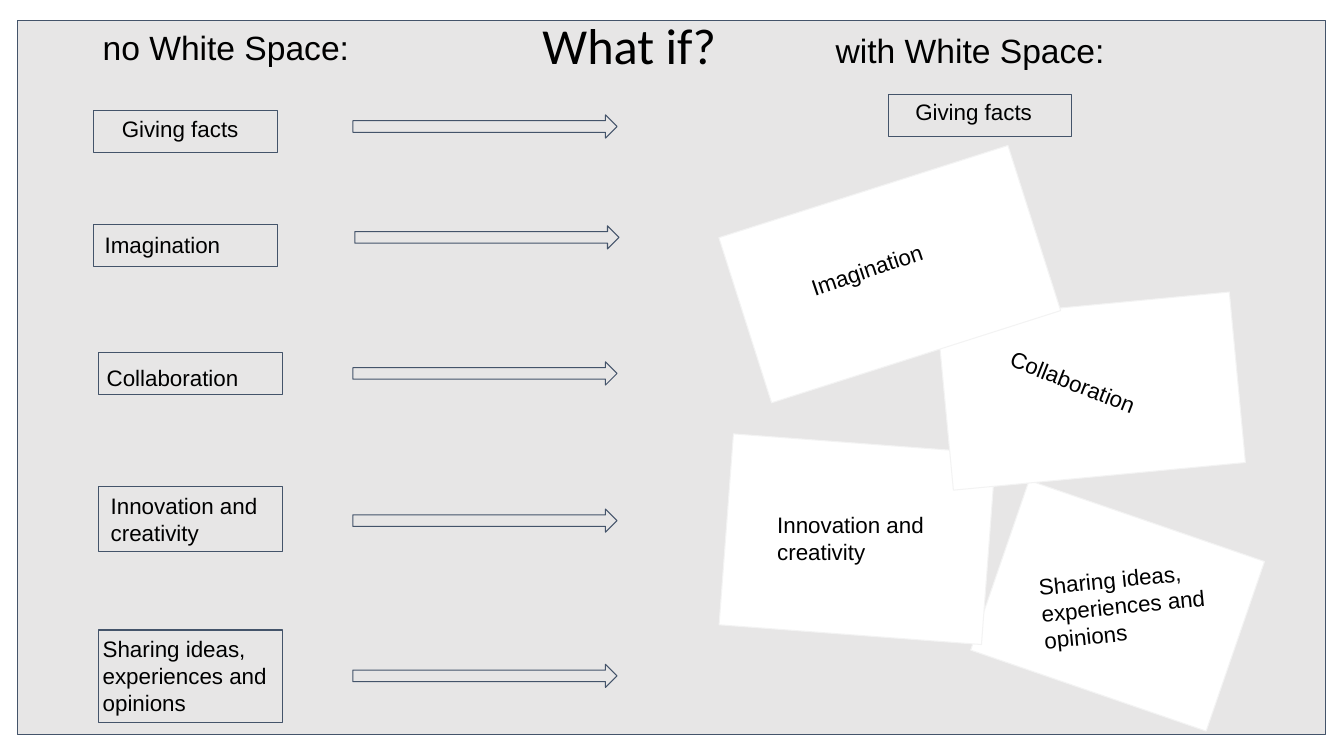
from pptx import Presentation
from pptx.dml.color import RGBColor
from pptx.enum.shapes import MSO_SHAPE as Form
from pptx.enum.text import MSO_ANCHOR as Anchor, MSO_AUTO_SIZE as Fit, PP_ALIGN as Align
from pptx.util import Inches, Pt

CELL = 0.1  # inches per grid column and row
GREY, NAVY, WHITE, PALE = "E7E6E6", "44546A", "FFFFFF", "F3F3F3"


def tint(code):
    return RGBColor.from_string(code)


def grid(*cells):
    return [Inches(n * CELL) for n in cells]


def apply(item, style):
    for key, value in style.items():
        setattr(item, key, value)


class Board:
    """Holds the current slide and its text style."""

    frame = dict(word_wrap=True, auto_size=Fit.NONE, vertical_anchor=Anchor.TOP)

    def __init__(self, deck):
        self.slide = deck.slides.add_slide(deck.slide_layouts[5])
        self.shapes = self.slide.shapes

    def block(self, area, fill=GREY, edge=NAVY, form=Form.RECTANGLE, turn=0):
        shape = self.shapes.add_shape(form, *grid(*area))
        shape.shadow.inherit = False
        shape.rotation = turn
        shape.fill.solid()
        shape.fill.fore_color.rgb = tint(fill)
        shape.line.color.rgb = tint(edge)
        shape.line.width = Pt(0.75)

    def arrow(self, left, top):
        self.block((left, top, 26.2, 2.3), form=Form.RIGHT_ARROW)

    def letter(self, shape, text, size, font="Arial", **style):
        """Put styled text in a shape and return its paragraph."""
        frame = shape.text_frame
        apply(frame, {**self.frame, **style})
        frame.text = text
        line = frame.paragraphs[0]
        line.alignment = Align.LEFT
        apply(line.font, dict(size=Pt(size), name=font))
        line.font.color.rgb = tint("000000")
        return line

    def label(self, text, area, size=16, turn=0):
        box = self.shapes.add_textbox(*grid(*area))
        box.rotation = turn
        pad = Inches(0.1)
        self.letter(box, text, size, margin_left=pad, margin_right=pad,
                    margin_top=pad, margin_bottom=pad)

    def title(self, text, area):
        """Fill the title placeholder and bring it to the front."""
        head = self.shapes.title
        names = ("left", "top", "width", "height")
        apply(head, dict(zip(names, grid(*area))))
        line = self.letter(head, text, 36, "Calibri", vertical_anchor=Anchor.MIDDLE)
        line.line_spacing = 0.9
        head.element.getparent().append(head.element)


FACTS, DREAM, TEAM = "Giving facts", "Imagination", "Collaboration"
IDEAS = "Innovation and creativity"
SHARE = "Sharing ideas, experiences and opinions"

# topic, box, label, arrow corner
PLAIN = [
    (FACTS, (9.3, 11, 18.2, 4.1), (11.1, 10.4, 15.6, 5.6), (35, 11.4)),
    (DREAM, (9.3, 22.3, 18.2, 4.1), (9.4, 21.9, 18.8, 5.6), (35.2, 22.4)),
    (TEAM, (9.8, 35, 18.2, 4.1), (9.6, 35.1, 19.5, 5.9), (35, 35.9)),
    (IDEAS, (9.8, 48.3, 18.2, 6.4), (10, 47.8, 18, 7.7), (35, 50.5)),
    (SHARE, (9.8, 62.5, 18.2, 9.2), (9.2, 62, 25, 10.8), (35, 65.9)),
]

# topic, card, card turn, label, label turn; from back to front
CARDS = [
    (SHARE, (98.5, 51.2, 24.7, 17.8), 19, (102.3, 54.7, 25, 10.8), -5.8),
    (IDEAS, (72, 44, 26.1, 19), 4.3, (76.1, 49.7, 18, 7.7), 0),
    (TEAM, (93.7, 30.3, 29.1, 17), -5.4, (98, 36.7, 22, 8.3), 21.6),
    (DREAM, (73.2, 18.6, 30.1, 17.2), -17.7, (79.7, 23.7, 17.2, 8.1), -18.6),
]


def main():
    deck = Presentation()
    apply(deck, dict(slide_width=Inches(13.33), slide_height=Inches(7.5)))
    board = Board(deck)

    board.block((1.7, 2, 129.8, 70.9))
    board.title("What if?", (52.8, 0.2, 23, 9.2))
    board.label("no White Space:", (9.2, 1.7, 30.6, 6.4), 24)
    board.label("with White Space:", (81.9, 2, 37.3, 6.4), 24)

    for topic, box, area, tip in PLAIN:
        board.block(box)
        board.label(topic, area)
        board.arrow(*tip)

    board.block((88.1, 9.4, 18.2, 4.1))
    board.label(FACTS, (89.8, 8.7, 15.6, 5.6))
    for topic, card, lean, area, turn in CARDS:
        board.block(card, WHITE, PALE, turn=lean)
        board.label(topic, area, turn=turn)

    deck.save("out.pptx")


if __name__ == "__main__":
    main()
